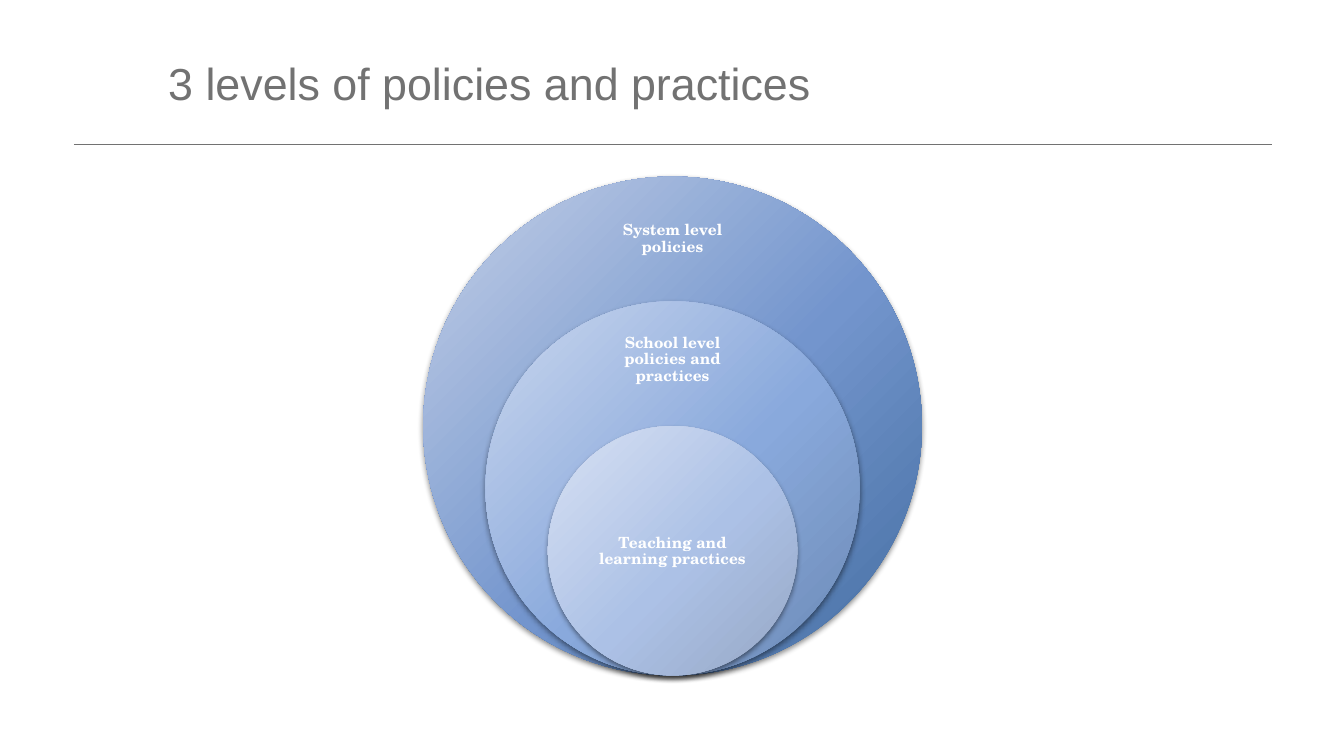
from dataclasses import dataclass

from pptx import Presentation
from pptx.dml.color import RGBColor as Rgb
from pptx.enum.shapes import MSO_CONNECTOR as Link, MSO_SHAPE as Form
from pptx.enum.text import MSO_ANCHOR as Anchor, PP_ALIGN as Align
from pptx.oxml import parse_xml
from pptx.oxml.ns import nsdecls, qn
from pptx.shapes.autoshape import Shape
from pptx.slide import Slide
from pptx.util import Cm, Pt


@dataclass(frozen=True)
class Theme:
    grey: str = "727272"
    white: str = "FFFFFF"
    shade: str = "000000"
    head_font: str = "Arial"
    ring_font: str = "TeX Gyre Schola"
    head_size: float = 32
    ring_size: float = 11
    rule_size: float = 0.5


@dataclass(frozen=True)
class Box:
    left: float
    top: float
    width: float
    height: float


@dataclass(frozen=True)
class Level:
    text: str
    scale: float
    stops: tuple[str, str, str]
    top: float
    width: float
    height: float


THEME = Theme()

# All circles share a centre line and rest on one base line (cm)
MID, BASE, SPAN = 16.95, 17.02, 12.57
PLACES = (0, 55, 100)

LEVELS = (
    Level("System level policies", 1, ("C4D0E7", "7395CD", "436DA0"),
          5.08, 4.4, 1.88),
    Level("School level policies and practices", 0.75,
          ("CBD7EE", "89A9DC", "6B89B4"), 8.18, 4.4, 1.78),
    Level("Teaching and learning practices", 0.5,
          ("D8E1F3", "ACC1E6", "97A8C5"), 12.32, 4.45, 3.15),
)


def add_text(slide: Slide, box: Box, text: str, font: str, size: float,
             color: str, inset: float, bold: bool = False) -> Shape:
    shape = slide.shapes.add_textbox(
        Cm(box.left), Cm(box.top), Cm(box.width), Cm(box.height))
    frame = shape.text_frame
    frame.text = text
    frame.word_wrap = True
    frame.vertical_anchor = Anchor.MIDDLE
    frame.margin_left = frame.margin_right = Cm(inset)
    frame.margin_top = frame.margin_bottom = Cm(inset)
    for run in frame.paragraphs[0].runs:
        run.font.name = font
        run.font.size = Pt(size)
        run.font.bold = bold
        run.font.color.rgb = Rgb.from_string(color)
    return shape


def add_rule(slide: Slide, left: float, right: float, top: float) -> None:
    rule = slide.shapes.add_connector(
        Link.STRAIGHT, Cm(left), Cm(top), Cm(right), Cm(top))
    rule.line.color.rgb = Rgb.from_string(THEME.grey)
    rule.line.width = Pt(THEME.rule_size)
    rule._element.spPr.append(parse_xml(f"<a:effectLst {nsdecls('a')}/>"))


def paint(shape: Shape, stops: tuple[str, str, str]) -> None:
    """Give a circle its radial gradient and soft shadow."""
    shape.fill.background()
    shape.line.fill.background()
    shape.shadow.inherit = False
    props = shape._element.spPr
    marks = "".join(
        f'<a:gs pos="{place * 1000}"><a:srgbClr val="{color}"/></a:gs>'
        for place, color in zip(PLACES, stops))
    props.replace(props.find(qn("a:noFill")), parse_xml(
        f'<a:gradFill {nsdecls("a")} rotWithShape="1"><a:gsLst>{marks}</a:gsLst>'
        '<a:path path="circle"><a:fillToRect l="-40000" t="-90000" '
        'r="140000" b="190000"/></a:path></a:gradFill>'))
    props.find(qn("a:effectLst")).append(parse_xml(
        f'<a:outerShdw {nsdecls("a")} blurRad="{Pt(4)}" dist="{Pt(2)}" '
        f'dir="5400000" rotWithShape="0"><a:srgbClr val="{THEME.shade}">'
        '<a:alpha val="45000"/></a:srgbClr></a:outerShdw>'))


def add_level(slide: Slide, level: Level) -> None:
    size = SPAN * level.scale
    disc = slide.shapes.add_shape(
        Form.OVAL, Cm(MID - size / 2), Cm(BASE - size), Cm(size), Cm(size))
    paint(disc, level.stops)

    box = Box(MID - level.width / 2, level.top, level.width, level.height)
    label = add_text(slide, box, level.text, THEME.ring_font,
                     THEME.ring_size, THEME.white, 0.23, bold=True)
    para = label.text_frame.paragraphs[0]
    para.alignment = Align.CENTER
    para.line_spacing = 0.9
    para.space_after = Pt(0.35 * THEME.ring_size)


def main() -> None:
    deck = Presentation()
    deck.slide_width, deck.slide_height = Cm(33.87), Cm(19.05)
    slide = deck.slides.add_slide(deck.slide_layouts[6])

    # Heading and rule
    add_rule(slide, 1.86, 32.06, 3.64)
    add_text(slide, Box(3.99, 0.66, 27.46, 2.84),
             "3 levels of policies and practices", THEME.head_font,
             THEME.head_size, THEME.grey, 0.25)

    # Nested circles, largest first
    for level in LEVELS:
        add_level(slide, level)

    deck.save("out.pptx")


if __name__ == "__main__":
    main()
